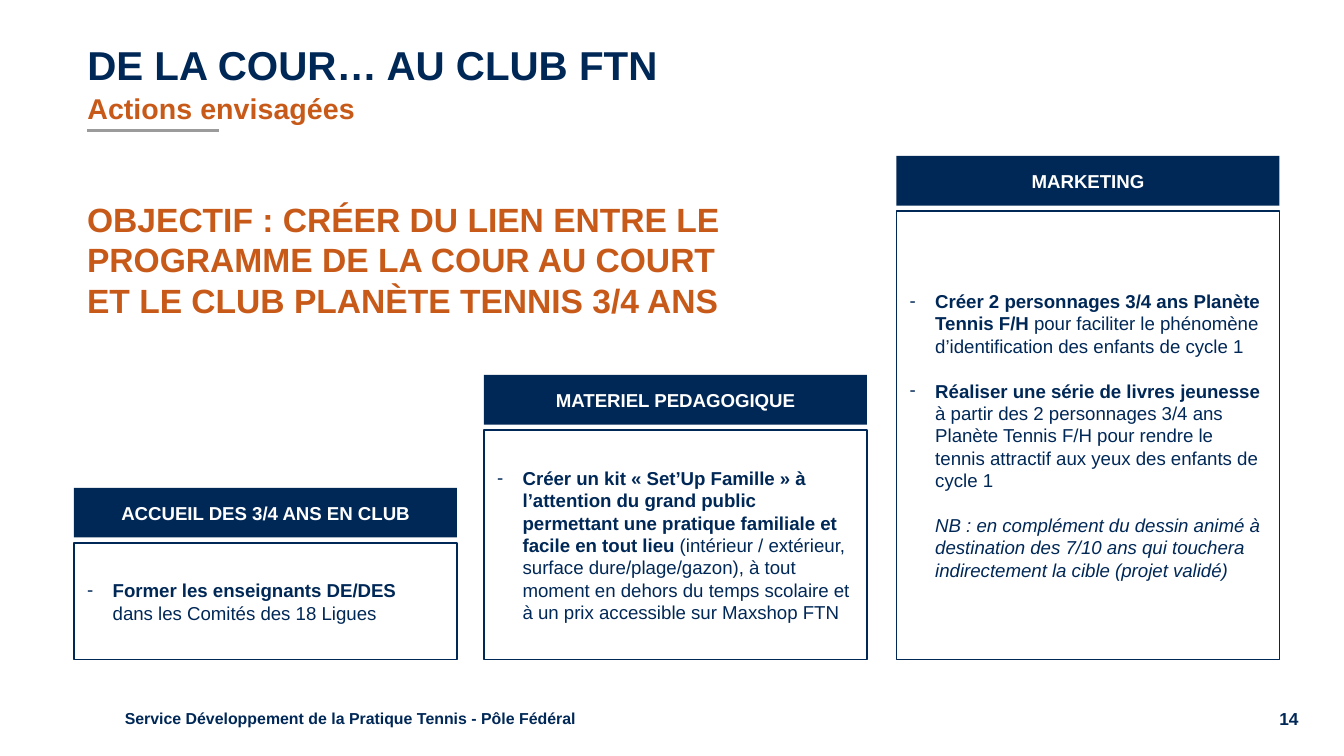
from lxml import etree
from pptx import Presentation
from pptx.dml.color import RGBColor
from pptx.enum.shapes import MSO_CONNECTOR, MSO_SHAPE
from pptx.enum.text import MSO_ANCHOR, MSO_AUTO_SIZE, PP_ALIGN
from pptx.oxml.ns import qn
from pptx.util import Inches, Pt

LEFT, CENTER, RIGHT = PP_ALIGN.LEFT, PP_ALIGN.CENTER, PP_ALIGN.RIGHT
TOP, MIDDLE = MSO_ANCHOR.TOP, MSO_ANCHOR.MIDDLE
NO_AUTOFIT = MSO_AUTO_SIZE.NONE
RECTANGLE, STRAIGHT = MSO_SHAPE.RECTANGLE, MSO_CONNECTOR.STRAIGHT

NAVY, ORANGE, GREY, WHITE = "002857", "C85A19", "9B9B9B", "FFFFFF"
SLIDE_WIDTH = 10
SLIDE_HEIGHT = SLIDE_WIDTH * 9 / 16
COLUMN_WIDTH, COLUMN_BOTTOM = 2.85, 4.91
HEADER_HEIGHT, HEADER_STEP = 0.37, 0.41
HANGING = 0.19

BOLD, PLAIN, ITALIC = {"bold": True}, {"bold": False}, {"italic": True}

COLUMNS = [
    (0.55, 3.63, "ACCUEIL DES 3/4 ANS EN CLUB", [
        ("-", [("Former les enseignants DE/DES\n", BOLD),
               ("dans les Comités des 18 Ligues", PLAIN)]),
    ]),
    (3.6, 2.79, "MATERIEL PEDAGOGIQUE", [
        ("-", [("Créer un kit « Set’Up Famille » à l’attention du grand public "
                "permettant une pratique familiale et facile en tout lieu ", BOLD),
               ("(intérieur / extérieur, surface dure/plage/gazon), à tout moment en "
                "dehors du temps scolaire et à un prix accessible sur Maxshop FTN", PLAIN)]),
    ]),
    (6.67, 1.16, "MARKETING", [
        ("-", [("Créer 2 personnages 3/4 ans Planète Tennis F/H ", BOLD),
               ("pour faciliter le phénomène d’identification des enfants de cycle 1", PLAIN)]),
        ("-", [("Réaliser une série de livres jeunesse ", BOLD),
               ("à partir des 2 personnages 3/4 ans Planète Tennis F/H pour rendre le "
                "tennis attractif aux yeux des enfants de cycle 1", PLAIN)]),
        (None, [("NB : en complément du dessin animé à destination des 7/10 ans qui "
                 "touchera indirectement la cible (projet validé)", ITALIC)]),
    ]),
]


def rgb(hex_value):
    """Turn a hex string into a colour."""
    return RGBColor.from_string(hex_value)


def apply_format(target, values):
    """Set every attribute of the dict on the target."""
    for name, value in values.items():
        setattr(target, name, value)


def style_font(font, size, color, **extra):
    """Give a font its face, size, colour and any further settings."""
    apply_format(font, {"name": "Arial", "size": Pt(size), **extra})
    font.color.rgb = rgb(color)


def place(item, box):
    """Move an item into the box, in inches."""
    fields = ("left", "top", "width", "height")
    apply_format(item, dict(zip(fields, map(Inches, box))))


def write_lines(item, lines, size, color, align=LEFT, anchor=MIDDLE):
    """Write bold lines, one paragraph each."""
    frame = item.text_frame
    frame.text = "\n".join(lines)
    apply_format(frame, {"word_wrap": True, "auto_size": NO_AUTOFIT,
                         "vertical_anchor": anchor})
    for paragraph in frame.paragraphs:
        apply_format(paragraph, {"alignment": align, "space_before": Pt(0)})
        for run in paragraph.runs:
            style_font(run.font, size, color, bold=True)


def add_label(slide, box, lines, size, color, **layout):
    """Add a text box holding bold lines."""
    label = slide.shapes.add_textbox(*map(Inches, box))
    write_lines(label, lines, size, color, **layout)


def add_panel(slide, box):
    """Add a rectangle without shadow."""
    panel = slide.shapes.add_shape(RECTANGLE, *map(Inches, box))
    panel.shadow.inherit = False
    return panel


def set_hanging(paragraph, bullet):
    """Indent a paragraph and hang its bullet, if it has one."""
    properties = paragraph._p.get_or_add_pPr()
    properties.set("marL", str(Inches(HANGING)))
    properties.set("indent", str(-Inches(HANGING) if bullet else 0))
    if bullet:
        etree.SubElement(properties, qn("a:buFont")).set("typeface", "Arial")
        etree.SubElement(properties, qn("a:buChar")).set("char", bullet)


def write_actions(frame, actions):
    """Write the actions of a column with their bullets and mixed emphasis."""
    apply_format(frame, {"word_wrap": True, "vertical_anchor": MIDDLE})
    for index, (bullet, segments) in enumerate(actions):
        action = frame.add_paragraph() if index else frame.paragraphs[0]
        apply_format(action, {"alignment": LEFT, "space_before": Pt(12 if index else 0)})
        set_hanging(action, bullet)
        for text, emphasis in segments:
            run = action.add_run()
            run.text = text.rstrip("\n")
            style_font(run.font, 10, NAVY, **emphasis)
            if text.endswith("\n"):
                action.add_line_break()


def add_column(slide, left, top, heading, actions):
    """Draw a column: a filled heading above an outlined list of actions."""
    body_top = top + HEADER_STEP
    body = add_panel(slide, (left, body_top, COLUMN_WIDTH, COLUMN_BOTTOM - body_top))
    body.fill.background()
    body.line.color.rgb = rgb(NAVY)
    body.line.width = Pt(0.75)
    write_actions(body.text_frame, actions)

    header = add_panel(slide, (left, top, COLUMN_WIDTH, HEADER_HEIGHT))
    header.fill.solid()
    header.fill.fore_color.rgb = rgb(NAVY)
    header.line.fill.background()
    write_lines(header, [heading], 10, WHITE, align=CENTER)


def add_heading(slide, left, top, width):
    """Place the title, the subtitle and the short rule under them."""
    title, subtitle = slide.shapes.title, slide.placeholders[1]
    place(title, (left, top, width, 0.34))
    write_lines(title, ["DE LA COUR… AU CLUB FTN"], 21.6, NAVY, anchor=TOP)
    place(subtitle, (left, top + 0.38, width, 0.32))
    write_lines(subtitle, ["Actions envisagées"], 15.3, ORANGE, anchor=TOP)

    rule_left, rule_top = left + 0.1, top + 0.72
    ends = (rule_left, rule_top, rule_left + 0.98, rule_top)
    rule = slide.shapes.add_connector(STRAIGHT, *map(Inches, ends))
    rule.line.color.rgb = rgb(GREY)
    rule.line.width = Pt(1.5)
    etree.SubElement(rule._element.spPr, qn("a:effectLst"))


def add_footer(slide, top, height):
    """Place the department name and the page number."""
    add_label(slide, (0.83, top, 4.62, height),
              ["Service Développement de la Pratique Tennis - Pôle Fédéral"], 8.5, NAVY)
    add_label(slide, (6.75, top, 3.01, height), ["14"], 9.3, NAVY, align=RIGHT)


def main():
    """Build the slide and save it."""
    presentation = Presentation()
    presentation.slide_width = Inches(SLIDE_WIDTH)
    presentation.slide_height = Inches(SLIDE_HEIGHT)
    slide = presentation.slides.add_slide(presentation.slide_layouts[0])
    add_footer(slide, 5.23, 0.23)
    add_heading(slide, 0.55, 0.25, 8.75)
    for column in COLUMNS:
        add_column(slide, *column)
    add_label(slide, (0.55, 1.26, 5.9, 1.34),
              ["OBJECTIF : CRÉER DU LIEN ENTRE LE PROGRAMME DE LA COUR AU COURT",
               "ET LE CLUB PLANÈTE TENNIS 3/4 ANS"], 18, ORANGE)
    presentation.save("out.pptx")


if __name__ == "__main__":
    main()
